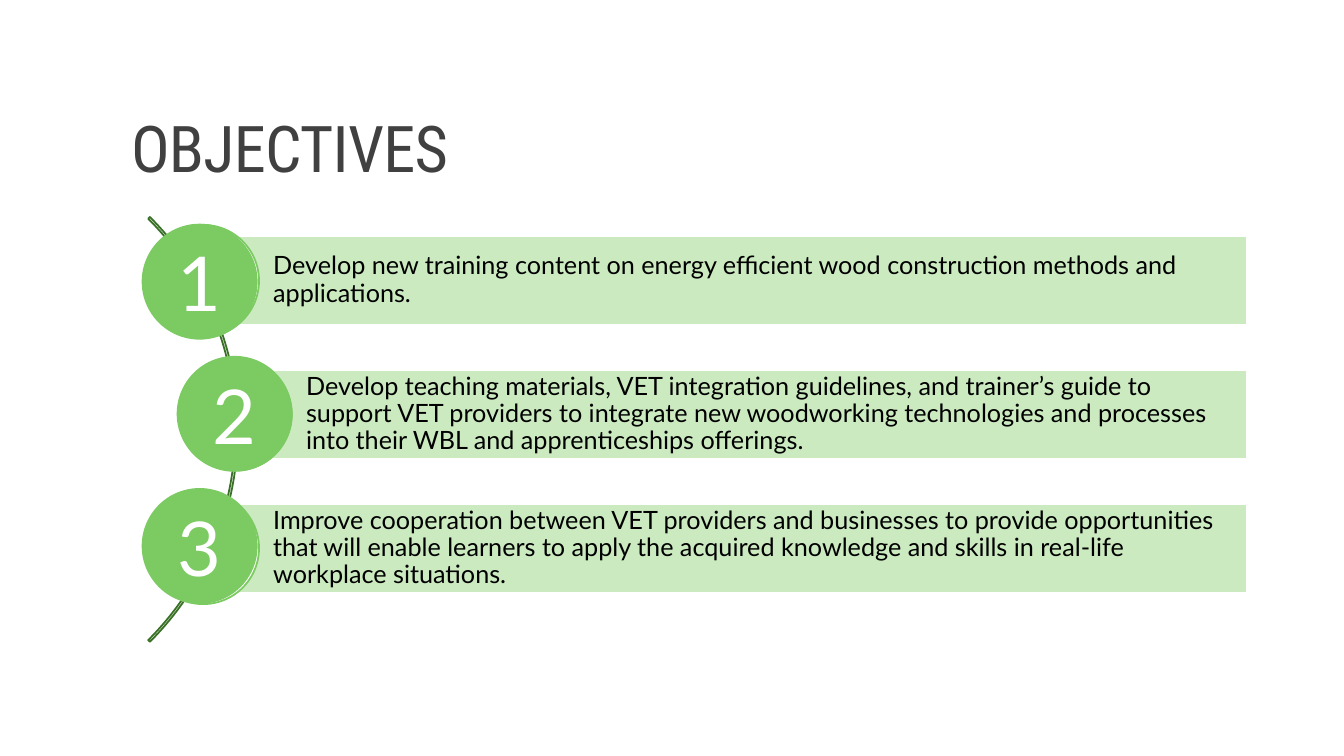
from pptx import Presentation
from pptx import util as u
from pptx.dml.color import RGBColor
from pptx.enum import shapes, text

GREEN = "7CCA62"
OBJECTIVES = [
    "Develop new training content on energy efficient wood construction methods and applications.",
    "Develop teaching materials, VET integration guidelines, and trainer’s guide to support VET providers "
    "to integrate new woodworking technologies and processes into their WBL and apprenticeships offerings.",
    "Improve cooperation between VET providers and businesses to provide opportunities that will enable "
    "learners to apply the acquired knowledge and skills in real-life workplace situations.",
]


def colour(value):
    return RGBColor.from_string(value)


def add_title(page, wording):
    title = page.shapes.title
    title.left, title.top = u.Pt(86.4), u.Pt(22.3)
    title.width, title.height = u.Pt(792), u.Pt(114.5)
    frame = title.text_frame
    frame.text = wording
    frame.auto_size = text.MSO_AUTO_SIZE.NONE
    frame.vertical_anchor = text.MSO_ANCHOR.BOTTOM
    para = frame.paragraphs[0]
    para.alignment = text.PP_ALIGN.LEFT
    para.line_spacing = 0.9
    set_font(para, "Roboto Condensed", 46, "404040")
    para.runs[0].font._element.set("spc", "-50")


def set_font(para, name, size, value):
    para.font.name = name
    para.font.size = u.Pt(size)
    para.font.color.rgb = colour(value)


def add_figure(page, kind, left, top, width, height, fill=None, line=None):
    figure = page.shapes.add_shape(kind, u.Pt(left), u.Pt(top), u.Pt(width), u.Pt(height))
    figure.shadow.inherit = False
    if fill:
        figure.fill.solid()
        figure.fill.fore_color.rgb = colour(fill)
    else:
        figure.fill.background()
    if line:
        figure.line.color.rgb = colour(line)
        figure.line.width = u.Pt(1.25)
    else:
        figure.line.fill.background()
    return figure


def write(figure, wording, size, value, align, insets):
    frame = figure.text_frame
    frame.word_wrap = True
    frame.vertical_anchor = text.MSO_ANCHOR.MIDDLE
    frame.margin_left, frame.margin_top, frame.margin_right, frame.margin_bottom = map(u.Pt, insets)
    frame.text = wording
    para = frame.paragraphs[0]
    para.alignment = align
    set_font(para, "Lato", size, value)
    return para


def add_arc(page):
    arc = add_figure(page, shapes.MSO_SHAPE.BLOCK_ARC, -259.2, 92.2, 429.1, 429.1, line="387026")
    for index, value in enumerate((189, 27, 0.004)):
        arc.adjustments[index] = value


def add_objective(page, index, wording):
    middle = index % 2
    bar_left = 144.7 + 23.6 * middle
    bar = add_figure(page, shapes.MSO_SHAPE.RECTANGLE, bar_left, 168.5 + 95.7 * index,
                     890.8 - bar_left, 63.4, "CBEAC0", "FFFFFF")
    para = write(bar, wording, 18, "000000", text.PP_ALIGN.LEFT, (50.4, 3.6, 3.6, 3.6))
    para.line_spacing = 0.9
    add_figure(page, shapes.MSO_SHAPE.OVAL, 105.1 + 23.4 * middle, 160.6 + 95.5 * index,
               79.9, 79.9, "FFFFFF", GREEN)
    disc = add_figure(page, shapes.MSO_SHAPE.OVAL, 101.2 + 25 * middle, 159.8 + 94.4 * index,
                      82.8, 82.8, GREEN)
    write(disc, str(index + 1), 54, "FFFFFF", text.PP_ALIGN.CENTER, (0, 0, 0, 0))


def main():
    deck = Presentation()
    deck.slide_width, deck.slide_height = u.Pt(960), u.Pt(540)
    page = deck.slides.add_slide(deck.slide_layouts[5])
    add_title(page, "OBJECTIVES")
    add_arc(page)
    for index, wording in enumerate(OBJECTIVES):
        add_objective(page, index, wording)
    deck.save("out.pptx")


if __name__ == "__main__":
    main()
